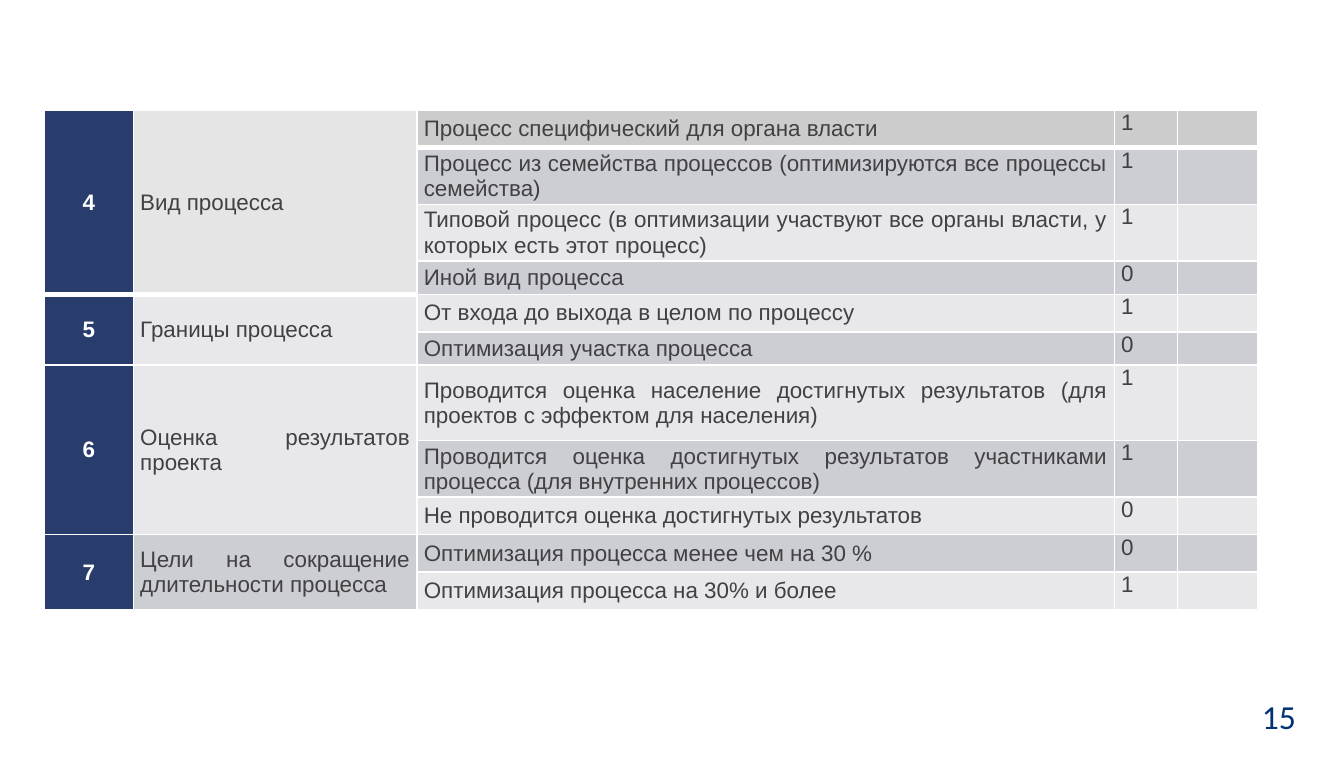
from lxml import etree
from pptx import Presentation
from pptx.dml.color import RGBColor
from pptx.enum import text
from pptx.oxml import ns
from pptx.util import Cm, Pt

# Content: number, criterion, options as (wording, score, row height in cm)
CRITERIA = [
    ("4", "Вид процесса", [
        ("Процесс специфический для органа власти", "1", 0.71),
        ("Процесс из семейства процессов (оптимизируются все процессы семейства)", "1", 1.07),
        ("Типовой процесс (в оптимизации участвуют все органы власти, у которых есть этот процесс)",
         "1", 1.07),
        ("Иной вид процесса", "0", 0.63),
    ]),
    ("5", "Границы процесса", [
        ("От входа до выхода в целом по процессу", "1", 0.71),
        ("Оптимизация участка процесса", "0", 0.63),
    ]),
    ("6", "Оценка результатов проекта", [
        ("Проводится оценка население достигнутых результатов "
         "(для проектов с эффектом для населения)", "1", 1.42),
        ("Проводится оценка достигнутых результатов участниками процесса "
         "(для внутренних процессов)", "1", 1.07),
        ("Не проводится оценка достигнутых результатов", "0", 0.71),
    ]),
    ("7", "Цели на сокращение длительности процесса", [
        ("Оптимизация процесса менее чем на 30 %", "0", 0.71),
        ("Оптимизация процесса на 30% и более", "1", 0.71),
    ]),
]
PAGE_NUMBER = "15"
COLUMN_WIDTHS = [1.68, 5.36, 13.18, 1.19, 1.52]
COLORS = {
    "number": "293D6D", "white": "FFFFFF", "text": "414042", "page": "003274",
    "first": "CCCCCC", "first_label": "E5E5E5", "dark": "CDCED4", "light": "E8E8EB",
}


def color(name):
    return RGBColor.from_string(COLORS[name])


def row_fill(row, column):
    if column == 0:
        return "number"
    if row == 0:
        return "first_label" if column == 1 else "first"
    return "dark" if row % 2 else "light"


def add_borders(cell, sides):
    """sides: list of (tag, width in points), in schema order."""
    properties = cell._tc.get_or_add_tcPr()
    for index, (tag, width) in enumerate(sides):
        line = etree.Element(ns.qn(f"a:{tag}"), w=str(Pt(width)))
        fill = etree.SubElement(line, ns.qn("a:solidFill"))
        etree.SubElement(fill, ns.qn("a:srgbClr"), val=COLORS["white"])
        properties.insert(index, line)


def style_cell(cell, row, column):
    cell.fill.solid()
    cell.fill.fore_color.rgb = color(row_fill(row, column))
    cell.margin_left = cell.margin_right = Cm(0.13)
    cell.margin_top = cell.margin_bottom = 0
    if column < 3:
        cell.vertical_anchor = text.MSO_ANCHOR.MIDDLE

    # The heading rule is thicker under the first row and the first criterion
    thick = row == 0 or (column < 2 and row < len(CRITERIA[0][2]))
    sides = [("lnL", 1), ("lnR", 1)]
    if row == 0:
        sides.append(("lnT", 1))
    add_borders(cell, sides + [("lnB", 3 if thick else 1)])

    paragraph = cell.text_frame.paragraphs[0]
    paragraph.alignment = text.PP_ALIGN.JUSTIFY if column else text.PP_ALIGN.CENTER
    for run in paragraph.runs:
        run.font.name, run.font.size = "Arial", Pt(12)
        run.font.bold = column == 0
        run.font.color.rgb = color("text" if column else "white")
    if not paragraph.runs:
        etree.SubElement(paragraph._p, ns.qn("a:endParaRPr"), sz="1200")


presentation = Presentation()
presentation.slide_width, presentation.slide_height = Cm(25.4), Cm(14.3)
slide = presentation.slides.add_slide(presentation.slide_layouts[6])

# Table of criteria
heights = [height for _, _, options in CRITERIA for _, _, height in options]
table = slide.shapes.add_table(
    len(heights), len(COLUMN_WIDTHS), Cm(0.84), Cm(2.08),
    Cm(sum(COLUMN_WIDTHS)), Cm(sum(heights))).table
for column, width in zip(table.columns, COLUMN_WIDTHS):
    column.width = Cm(width)
for row, height in zip(table.rows, heights):
    row.height = Cm(height)

first = 0
for number, criterion, options in CRITERIA:
    table.cell(first, 0).text = number
    table.cell(first, 1).text = criterion
    for row, (option, score, _) in enumerate(options, first):
        table.cell(row, 2).text = option
        table.cell(row, 3).text = score
    last = first + len(options) - 1
    for column in (0, 1):
        table.cell(first, column).merge(table.cell(last, column))
    first = last + 1

for row in range(len(heights)):
    for column in range(len(COLUMN_WIDTHS)):
        style_cell(table.cell(row, column), row, column)

# Page number
page_box = slide.shapes.add_textbox(Cm(23.6), Cm(13), Cm(1.75), Cm(1.04))
page_box.text_frame.word_wrap = True
page_box.text_frame.vertical_anchor = text.MSO_ANCHOR.MIDDLE
page_box.text_frame.text = PAGE_NUMBER
font = page_box.text_frame.paragraphs[0].runs[0].font
font.name, font.size = "Calibri", Pt(18)
font.color.rgb = color("page")

presentation.save("out.pptx")
